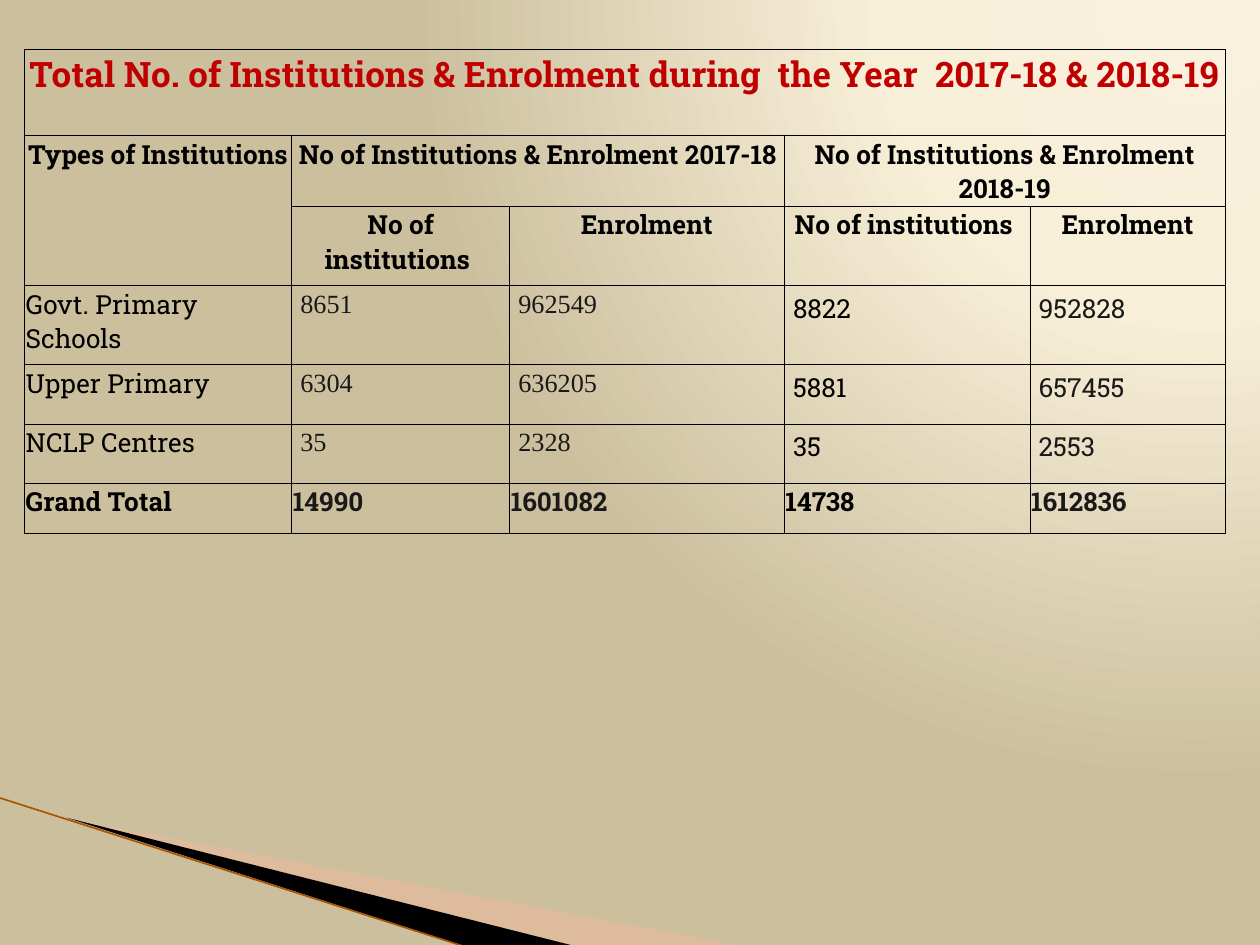
from dataclasses import dataclass

from pptx import Presentation
from pptx.dml.color import RGBColor
from pptx.enum.shapes import MSO_CONNECTOR
from pptx.enum.text import PP_ALIGN
from pptx.oxml import parse_xml
from pptx.oxml.ns import nsdecls
from pptx.util import Inches, Pt
from lxml import etree

CENTER, LEFT = PP_ALIGN.CENTER, PP_ALIGN.LEFT
STRAIGHT = MSO_CONNECTOR.STRAIGHT
BLACK = RGBColor(0x00, 0x00, 0x00)
GREY = RGBColor(0x19, 0x19, 0x19)
RED = RGBColor(0xC0, 0x00, 0x00)
PEACH = RGBColor(0xFC, 0xB7, 0x9B)
BROWN = RGBColor(0xAA, 0x55, 0x00)
CREAM = RGBColor(0xF9, 0xF1, 0xDE)
IVORY = RGBColor(0xF8, 0xEF, 0xD8)
SAND = RGBColor(0xCB, 0xBF, 0x9E)

SLAB, TIMES = "Roboto Slab", "Times New Roman"
WIDE, HIGH = Inches(10), Inches(7.5)
COLS = [2.12, 1.73, 2.18, 1.95, 1.55]
ROWS = [0.68, 0.56, 0.63, 0.63, 0.47, 0.47, 0.4]
TINTS = [BLACK, GREY, GREY, BLACK, GREY]
FACES = [SLAB, TIMES, TIMES, SLAB, SLAB]
BODY = [
    ["Govt. Primary Schools", "8651", "962549", "8822", "952828"],
    ["Upper Primary", "6304", "636205", "5881", "657455"],
    ["NCLP Centres", "35", "2328", "35", "2553"],
]
TOTAL = ["Grand Total", "14990", "1601082", "14738", "1612836"]


@dataclass
class Entry:
    row: int
    col: int
    text: str
    color: RGBColor = BLACK
    face: str = SLAB
    size: int = 15
    bold: bool = True
    align: PP_ALIGN = CENTER
    pad: float = 0.01
    top: float = 0.01
    space: float = 1.0
    down: int = 1
    over: int = 1


@dataclass
class Wedge:
    frame: tuple[float, float, float, float]
    points: list[tuple[float, float]]
    color: RGBColor
    alpha: int = 100


HEADS = [
    Entry(0, 0, "Total No. of Institutions & Enrolment during  the Year  2017-18 & 2018-19",
          RED, size=20, over=5),
    Entry(1, 0, "Types of Institutions", down=2),
    Entry(1, 1, "No of Institutions & Enrolment 2017-18", over=2),
    Entry(1, 3, "No of Institutions & Enrolment 2018-19", over=2),
] + [
    Entry(2, col, text)
    for start in (1, 3)
    for col, text in enumerate(("No of institutions ", "Enrolment"), start)
]
WEDGES = [
    Wedge((0.78, 5.47, 4.16, 1.58),
          [(0.55, 6.5), (5.95, 7.52), (4.56, 7.52)], PEACH, 40),
    Wedge((-0.06, 6.33, 4.16, 0.92),
          [(0.53, 6.49), (4.57, 7.51), (3.72, 7.52)], BLACK),
]


def paint_back(slide) -> None:
    stops = "".join(
        f'<a:gs pos="{share * 1000}"><a:srgbClr val="{color}"/></a:gs>'
        for share, color in ((0, CREAM), (40, IVORY), (100, SAND))
    )
    slide.element.cSld.insert(0, parse_xml(
        f'<p:bg {nsdecls("p", "a")}><p:bgPr><a:gradFill rotWithShape="1">'
        f'<a:gsLst>{stops}</a:gsLst><a:path path="circle">'
        '<a:fillToRect l="95000" t="-106000" r="5000" b="206000"/></a:path>'
        '</a:gradFill><a:effectLst/></p:bgPr></p:bg>'
    ))


def set_frame(shape, frame: tuple[float, float, float, float]) -> None:
    left, top, width, height = (Inches(part) for part in frame)
    trace = shape._element.spPr.find(".//{*}pathLst")[0]
    for spot in trace.iter("{*}pt"):
        spot.set("x", str(int(spot.get("x")) + shape.left - left))
        spot.set("y", str(int(spot.get("y")) + shape.top - top))
    trace.set("w", str(width))
    trace.set("h", str(height))
    shape.left, shape.top, shape.width, shape.height = left, top, width, height


def draw_wedge(slide, wedge: Wedge) -> None:
    spots = [(Inches(x), Inches(y)) for x, y in wedge.points]
    build = slide.shapes.build_freeform(*spots[0])
    build.add_line_segments(spots[1:], close=True)
    shape = build.convert_to_shape()
    set_frame(shape, wedge.frame)
    shape.shadow.inherit = False
    shape.fill.solid()
    shape.fill.fore_color.rgb = wedge.color
    shape.line.fill.background()
    if wedge.alpha < 100:
        tint = shape.fill._xPr.find(".//{*}srgbClr")
        tint.append(parse_xml(f'<a:alpha {nsdecls("a")} val="{wedge.alpha * 1000}"/>'))


def draw_edge(slide) -> None:
    line = slide.shapes.add_connector(
        STRAIGHT, Inches(-0.01), Inches(6.33), Inches(3.71), Inches(7.52))
    line.line.color.rgb = BROWN
    line.line.width = Pt(0.95)
    props = line._element.spPr
    etree.SubElement(props, props.tag.replace("}spPr", "}effectLst").replace(
        "presentationml", "drawingml"))


def add_rules(cell) -> None:
    props = cell._tc.get_or_add_tcPr()
    for side in "LRTB":
        props.append(parse_xml(
            f'<a:ln{side} {nsdecls("a")} w="{Pt(0.5)}"><a:solidFill>'
            f'<a:srgbClr val="{BLACK}"/></a:solidFill></a:ln{side}>'
        ))
    cell.fill.background()


def fill_cell(table, entry: Entry) -> None:
    cell = table.cell(entry.row, entry.col)
    if entry.down * entry.over > 1:
        cell.merge(table.cell(entry.row + entry.down - 1, entry.col + entry.over - 1))
    cell.margin_left = cell.margin_right = Inches(entry.pad)
    cell.margin_top, cell.margin_bottom = Inches(entry.top), 0
    cell.text_frame.text = entry.text
    para = cell.text_frame.paragraphs[0]
    para.alignment = entry.align
    para.line_spacing = entry.space
    font = para.runs[0].font
    font.name, font.size, font.bold = entry.face, Pt(entry.size), entry.bold
    font.color.rgb = entry.color


def list_data() -> list[Entry]:
    items = []
    for row, texts in enumerate(BODY, 3):
        for col, text in enumerate(texts):
            pad, top, space = (0.07, 0, 1.15) if col else (0.01, 0.01, 1.0)
            items.append(Entry(row, col, text, TINTS[col], FACES[col], bold=False,
                               align=LEFT, pad=pad, top=top, space=space))
    last = len(ROWS) - 1
    items += [Entry(last, col, text, TINTS[col], align=LEFT)
              for col, text in enumerate(TOTAL)]
    return items


def draw_table(slide) -> None:
    frame = slide.shapes.add_table(
        len(ROWS), len(COLS), Pt(14), Pt(28.4),
        Inches(sum(COLS)), Inches(sum(ROWS)))
    table = frame.table
    table.first_row = table.horz_banding = False
    for col, width in zip(table.columns, COLS):
        col.width = Inches(width)
    for row, height in zip(table.rows, ROWS):
        row.height = Inches(height)
    for cell in table.iter_cells():
        add_rules(cell)
    for entry in HEADS + list_data():
        fill_cell(table, entry)


def main() -> None:
    deck = Presentation()
    deck.slide_width, deck.slide_height = WIDE, HIGH
    slide = deck.slides.add_slide(deck.slide_layouts[6])
    paint_back(slide)
    for wedge in WEDGES:
        draw_wedge(slide, wedge)
    draw_edge(slide)
    draw_table(slide)
    deck.save("out.pptx")


if __name__ == "__main__":
    main()
